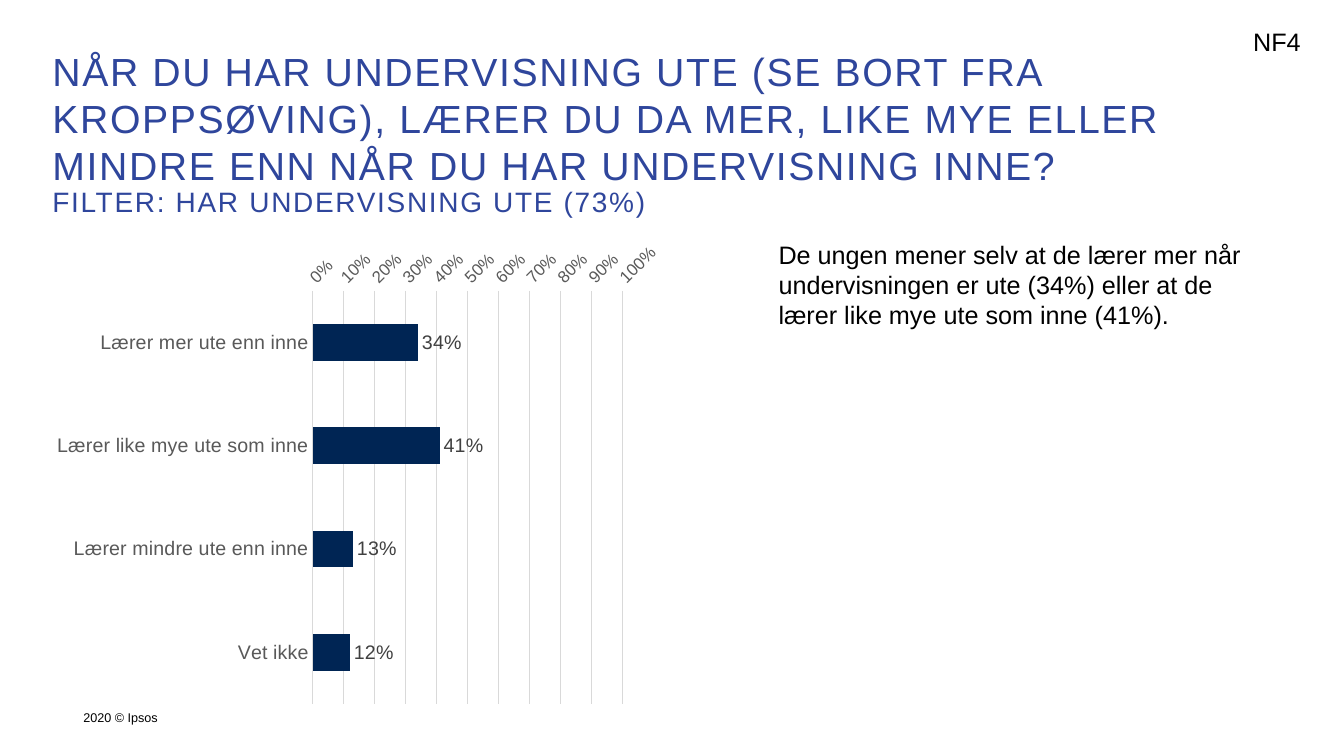
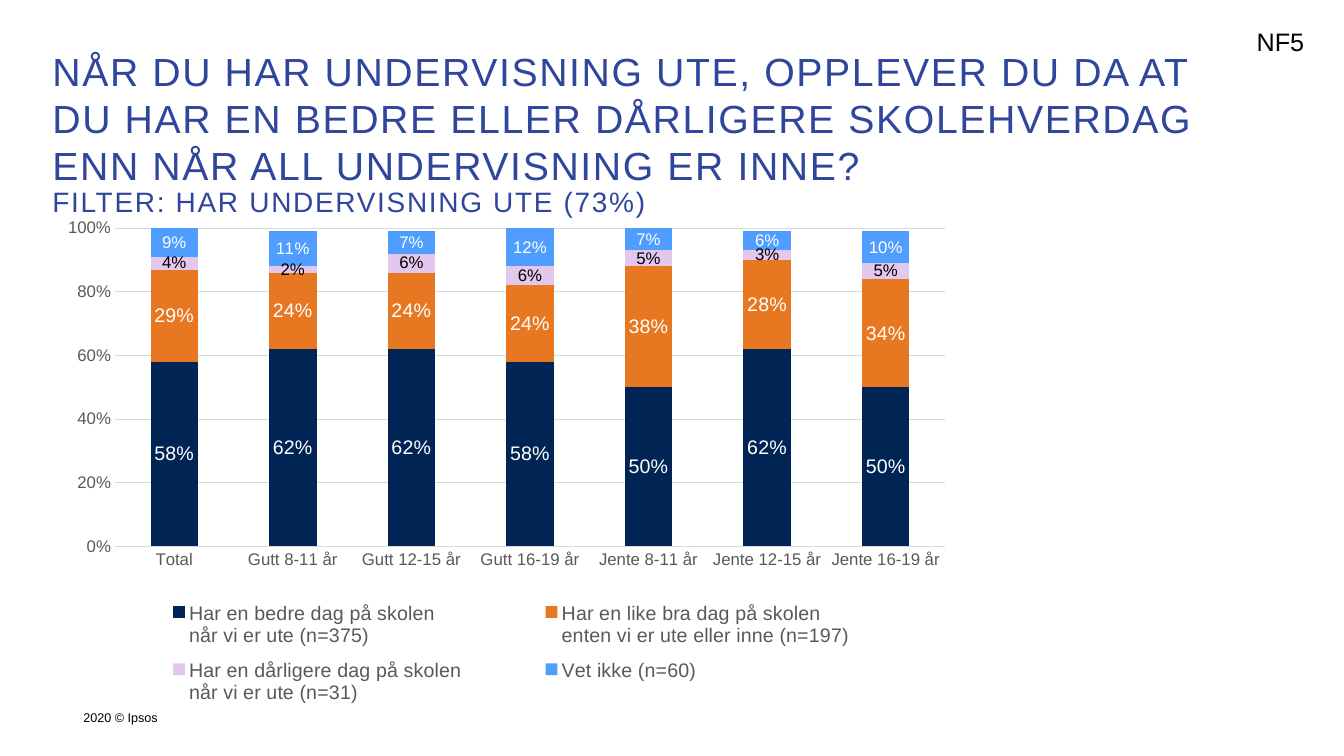
from dataclasses import dataclass
from typing import Optional

from lxml import etree
from pptx import Presentation
from pptx.chart.chart import Chart
from pptx.chart.data import CategoryChartData
from pptx.dml.color import RGBColor
from pptx.enum import chart as ch, text as tx
from pptx.oxml import ns
from pptx.slide import Slide
from pptx.text.text import Font, TextFrame
from pptx.util import Cm, Length, Pt


@dataclass(frozen=True)
class Theme:
    font: str = "Arial"
    heading: str = "2F469C"
    ink: str = "000000"
    white: str = "FFFFFF"
    axis_text: str = "595959"
    bar_label: str = "404040"
    grid: str = "D9D9D9"
    navy: str = "002554"
    orange: str = "E87722"
    lilac: str = "E4C7EC"
    blue: str = "4F9DFF"
    title_size: int = 28
    filter_size: int = 20
    body_size: int = 18
    label_size: int = 14
    small_size: int = 12
    chart_size: int = 10
    footer_size: int = 9


THEME = Theme()
FILTER = "FILTER: HAR UNDERVISNING UTE (73%)"
FOOTER = "2020 © Ipsos"
MARGIN = 1.12


@dataclass(frozen=True)
class Box:
    """Left, top, width and height: centimetres on a slide, percent inside a chart."""
    left: float
    top: float
    width: float
    height: float

    def lengths(self) -> tuple[Length, ...]:
        return Cm(self.left), Cm(self.top), Cm(self.width), Cm(self.height)

    def fractions(self) -> tuple[float, ...]:
        return tuple(round(part / 100, 3)
                     for part in (self.left, self.top, self.width, self.height))


@dataclass(frozen=True)
class Answer:
    name: str
    values: tuple[float, ...]
    color: str
    label_color: str = THEME.white
    label_size: int = THEME.label_size


@dataclass(frozen=True)
class Survey:
    kind: ch.XL_CHART_TYPE
    box: Box
    plot: Box
    groups: tuple[str, ...]
    answers: tuple[Answer, ...]
    gap: int
    step: float
    group_size: int
    legend: Optional[Box] = None


@dataclass(frozen=True)
class Question:
    code: str
    code_left: float
    wording: str
    title_width: float
    survey: Survey
    finding: str = ""


QUESTIONS = (
    Question(
        "NF4", 31.33,
        "NÅR DU HAR UNDERVISNING UTE (SE BORT FRA KROPPSØVING), LÆRER DU DA MER, "
        "LIKE MYE ELLER MINDRE ENN NÅR DU HAR UNDERVISNING INNE?",
        31.62,
        Survey(
            ch.XL_CHART_TYPE.BAR_CLUSTERED, Box(MARGIN, 5.89, 15.8, 12.09),
            Box(42.8, 11.9, 49.4, 86.1),
            ("Lærer mer ute enn inne", "Lærer like mye ute som inne",
             "Lærer mindre ute enn inne", "Vet ikke"),
            (Answer("Series 1", (0.34, 0.41, 0.13, 0.12), THEME.navy, THEME.bar_label),),
            gap=182, step=0.1, group_size=THEME.label_size),
        "De ungen mener selv at de lærer mer når undervisningen er ute (34%) "
        "eller at de lærer like mye ute som inne (41%)."),
    Question(
        "NF5", 31.42,
        "NÅR DU HAR UNDERVISNING UTE, OPPLEVER DU DA AT DU HAR EN BEDRE ELLER "
        "DÅRLIGERE SKOLEHVERDAG ENN NÅR ALL UNDERVISNING ER INNE?",
        29.95,
        Survey(
            ch.XL_CHART_TYPE.COLUMN_STACKED, Box(MARGIN, 5.31, 23.09, 12.98),
            Box(7.7, 3.4, 90.6, 61.8),
            ("Total", "Gutt 8-11 år", "Gutt 12-15 år", "Gutt 16-19 år",
             "Jente 8-11 år", "Jente 12-15 år", "Jente 16-19 år"),
            (Answer("Har en bedre dag på skolen\nnår vi er ute (n=375)",
                    (0.58, 0.62, 0.62, 0.58, 0.5, 0.62, 0.5), THEME.navy),
             Answer("Har en like bra dag på skolen\nenten vi er ute eller inne (n=197)",
                    (0.29, 0.24, 0.24, 0.24, 0.38, 0.28, 0.34), THEME.orange),
             Answer("Har en dårligere dag på skolen\nnår vi er ute (n=31)",
                    (0.04, 0.02, 0.06, 0.06, 0.05, 0.03, 0.05), THEME.lilac,
                    THEME.ink, THEME.small_size),
             Answer("Vet ikke (n=60)",
                    (0.09, 0.11, 0.07, 0.12, 0.07, 0.06, 0.1), THEME.blue,
                    THEME.white, THEME.small_size)),
            gap=150, step=0.2, group_size=THEME.small_size,
            legend=Box(5.6, 73.5, 90.7, 24.7))),
)


def set_font(font: Font, size: int, color: str) -> None:
    font.name = THEME.font
    font.size = Pt(size)
    font.bold = False
    font.color.rgb = RGBColor.from_string(color)


def add_title(slide: Slide, question: Question) -> None:
    title = slide.shapes.title
    title.left, title.top, title.width, title.height = Box(
        MARGIN, 1.07, question.title_width, 4.27).lengths()
    frame = title.text_frame
    frame.word_wrap = True
    frame.auto_size = tx.MSO_AUTO_SIZE.SHAPE_TO_FIT_TEXT
    frame.vertical_anchor = tx.MSO_ANCHOR.TOP
    frame.margin_left = frame.margin_right = Cm(0.2)
    lines = ((question.wording, THEME.title_size, 1.0), (FILTER, THEME.filter_size, 0.9))
    frame.text = "\n".join(words for words, _, _ in lines)
    for paragraph, (_, size, spacing) in zip(frame.paragraphs, lines):
        paragraph.alignment = tx.PP_ALIGN.LEFT
        paragraph.line_spacing = spacing
        paragraph.space_before = Pt(0)
        set_font(paragraph.font, size, THEME.heading)
        paragraph.runs[0]._r.get_or_add_rPr().set("spc", "120")


def add_text(slide: Slide, words: str, box: Box, size: int, wrap: bool = True) -> TextFrame:
    frame = slide.shapes.add_textbox(*box.lengths()).text_frame
    frame.word_wrap = wrap
    frame.text = words
    set_font(frame.paragraphs[0].font, size, THEME.ink)
    return frame


def add_footer(slide: Slide) -> None:
    frame = add_text(slide, FOOTER, Box(2.1, 17.58, 29.03, 1.02), THEME.footer_size)
    frame.margin_left = frame.margin_right = 0
    frame.vertical_anchor = tx.MSO_ANCHOR.MIDDLE


def manual_layout(box: Box, inner: bool) -> etree._Element:
    """Build the layout element that fixes a chart part in place."""
    layout = etree.Element(ns.qn("c:layout"))
    manual = etree.SubElement(layout, ns.qn("c:manualLayout"))
    settings = [("layoutTarget", "inner")] if inner else []
    settings += [("xMode", "edge"), ("yMode", "edge")]
    settings += zip("xywh", map(str, box.fractions()))
    for tag, value in settings:
        etree.SubElement(manual, ns.qn(f"c:{tag}")).set("val", value)
    return layout


def place_plot(chart: Chart, box: Box) -> None:
    area = chart._chartSpace.chart.plotArea
    for old in area.findall(ns.qn("c:layout")):
        area.remove(old)
    area.insert(0, manual_layout(box, inner=True))


def add_legend(chart: Chart, box: Box) -> None:
    chart.has_legend = True
    legend = chart.legend
    legend.position = ch.XL_LEGEND_POSITION.BOTTOM
    legend.include_in_layout = False
    set_font(legend.font, THEME.label_size, THEME.axis_text)
    for old in legend._element.findall(ns.qn("c:layout")):
        legend._element.remove(old)
    legend._element.find(ns.qn("c:legendPos")).addnext(manual_layout(box, inner=False))


def style_axes(chart: Chart, survey: Survey, horizontal: bool) -> None:
    groups, shares = chart.category_axis, chart.value_axis
    for axis, size in ((groups, survey.group_size), (shares, THEME.small_size)):
        axis.major_tick_mark = axis.minor_tick_mark = ch.XL_TICK_MARK.NONE
        set_font(axis.tick_labels.font, size, THEME.axis_text)
    groups.reverse_order = horizontal
    shares.minimum_scale, shares.maximum_scale = 0, 1
    shares.major_unit = survey.step
    shares.tick_labels.number_format = "0%"
    shares.tick_labels.number_format_is_linked = False
    shares.has_major_gridlines = True
    for line in (groups.format.line, shares.major_gridlines.format.line):
        line.color.rgb = RGBColor.from_string(THEME.grid)
        line.width = Pt(0.75)
    shares.format.line.fill.background()
    if horizontal:
        shares._element.find(".//" + ns.qn("a:bodyPr")).set("rot", "-2700000")


def add_survey_chart(slide: Slide, survey: Survey) -> None:
    data = CategoryChartData(number_format="0%")
    data.categories = survey.groups
    for answer in survey.answers:
        data.add_series(answer.name, answer.values)
    chart = slide.shapes.add_chart(survey.kind, *survey.box.lengths(), data).chart
    set_font(chart.font, THEME.chart_size, THEME.ink)
    chart.has_title = False
    horizontal = survey.kind == ch.XL_CHART_TYPE.BAR_CLUSTERED
    style_axes(chart, survey, horizontal)
    place_plot(chart, survey.plot)

    bars = chart.plots[0]
    bars.vary_by_categories = False
    bars.gap_width = survey.gap
    position = ch.XL_LABEL_POSITION.OUTSIDE_END if horizontal else ch.XL_LABEL_POSITION.CENTER
    for series, answer in zip(bars.series, survey.answers):
        series.format.fill.solid()
        series.format.fill.fore_color.rgb = RGBColor.from_string(answer.color)
        series.invert_if_negative = False
        labels = series.data_labels
        labels.show_value = True
        labels.number_format = "0%"
        labels.number_format_is_linked = False
        labels.position = position
        set_font(labels.font, answer.label_size, answer.label_color)

    chart.has_legend = False
    if survey.legend:
        add_legend(chart, survey.legend)


def main() -> None:
    deck = Presentation()
    deck.slide_width, deck.slide_height = Cm(33.87), Cm(19.05)
    title_only = deck.slide_layouts[5]
    for question in QUESTIONS:
        slide = deck.slides.add_slide(title_only)
        add_footer(slide)
        add_title(slide, question)
        add_survey_chart(slide, question.survey)
        if question.finding:
            add_text(slide, question.finding, Box(19.37, 5.9, 12.37, 3.33), THEME.body_size)
        add_text(slide, question.code, Box(question.code_left, 0.55, 1.73, 1.02),
                 THEME.body_size, wrap=False)
    deck.save("out.pptx")


if __name__ == "__main__":
    main()
